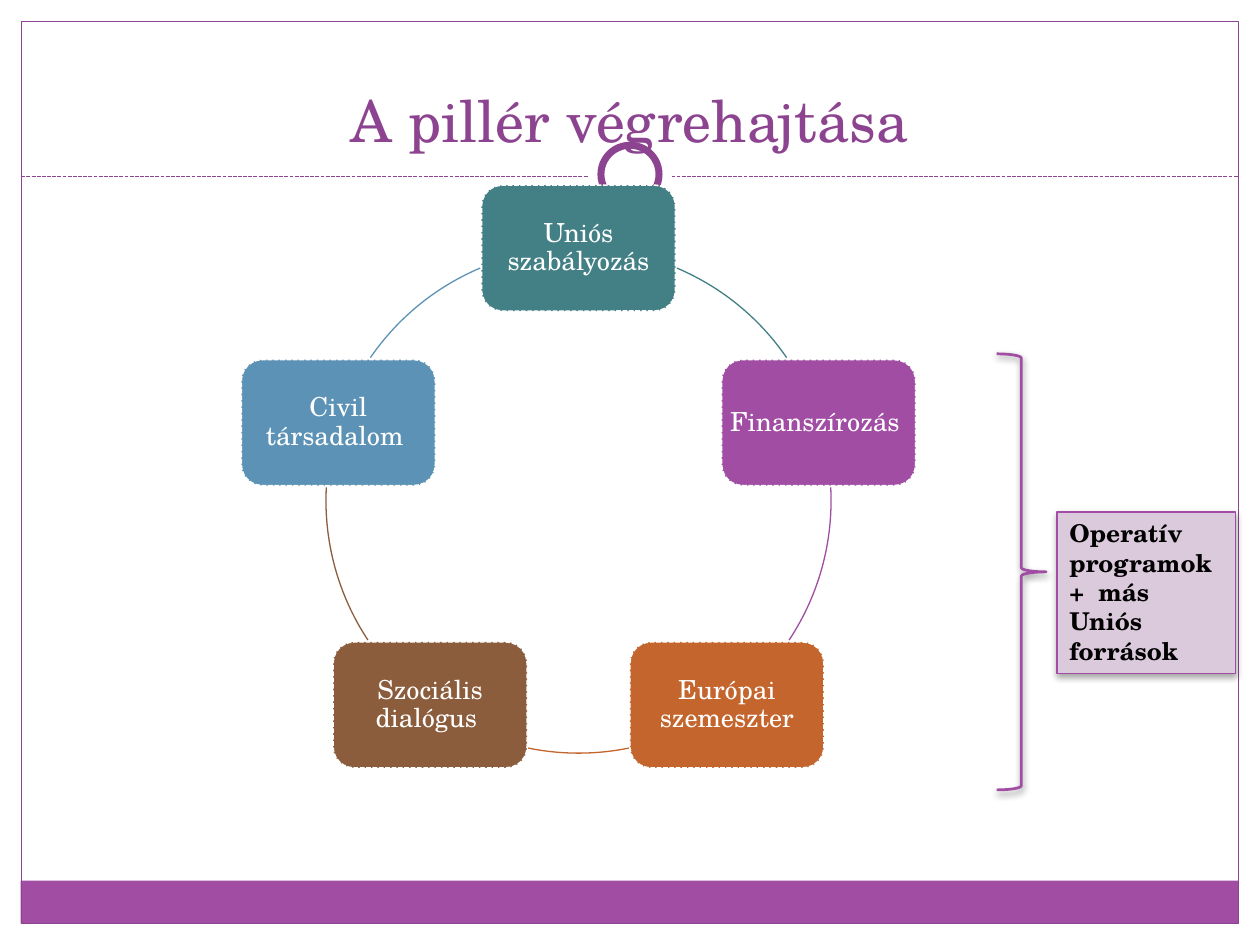
import math

import lxml.etree
import pptx
import pptx.dml.color
import pptx.enum.dml
import pptx.enum.shapes
import pptx.enum.text
import pptx.oxml.ns
import pptx.util

Pt = pptx.util.Pt
Shape = pptx.enum.shapes.MSO_SHAPE
Align = pptx.enum.text.PP_ALIGN
Anchor = pptx.enum.text.MSO_ANCHOR
qn = pptx.oxml.ns.qn

PURPLE = "A04DA3"
DARK_PURPLE = "8D4490"
WHITE = "FFFFFF"

CENTER_X, CENTER_Y, RADIUS = 330.6, 286.1, 144.3
NODE_WIDTH, NODE_HEIGHT = 110.9, 72
NODES = [
    ("Uniós szabályozás", "438086", 292.9, 325.5),
    ("Finanszírozás ", PURPLE, 357, 33.5),
    ("Európai szemeszter", "C4652D", 78.5, 101.5),
    ("Szociális dialógus ", "8B5D3D", 146.5, 183),
    ("Civil társadalom ", "5C92B5", 214.5, 247.1),
]


def color(value):
    return pptx.dml.color.RGBColor.from_string(value)


class SlideBuilder:
    font = "TeX Gyre Schola"

    def __init__(self, slide):
        self.slide = slide

    def outline(self, line, value, width, dashed=False):
        line.color.rgb = color(value)
        line.width = Pt(width)
        if dashed:
            line.dash_style = pptx.enum.dml.MSO_LINE.SQUARE_DOT

    def shape(self, kind, box, fill=None, line=None, width=0.75, dashed=False):
        shape = self.slide.shapes.add_shape(kind, *map(Pt, box))
        shape.shadow.inherit = False
        if fill:
            shape.fill.solid()
            shape.fill.fore_color.rgb = color(fill)
        else:
            shape.fill.background()
        if line:
            self.outline(shape.line, line, width, dashed)
        else:
            shape.line.fill.background()
        return shape

    def rule(self, left, right, y):
        connector = self.slide.shapes.add_connector(
            pptx.enum.shapes.MSO_CONNECTOR.STRAIGHT, Pt(left), Pt(y), Pt(right), Pt(y))
        self.outline(connector.line, DARK_PURPLE, 0.75, dashed=True)
        lxml.etree.SubElement(connector._element.spPr, qn("a:effectLst"))

    def arc(self, start, end, line):
        box = (CENTER_X - RADIUS, CENTER_Y - RADIUS, 2 * RADIUS, 2 * RADIUS)
        arc = self.shape(Shape.ARC, box, line=line)
        for index, angle in enumerate((start, end)):
            arc.adjustments[index] = angle * 0.6

    def drop_shadow(self, shape, opacity):
        effects = shape._element.spPr.find(qn("a:effectLst"))
        shadow = lxml.etree.SubElement(
            effects, qn("a:outerShdw"), blurRad=str(Pt(4)), dist=str(Pt(2)),
            dir="5400000", rotWithShape="0")
        black = lxml.etree.SubElement(shadow, qn("a:srgbClr"), val="000000")
        lxml.etree.SubElement(black, qn("a:alpha"), val=str(opacity * 1000))

    def label(self, shape, text, size, value, align, anchor, insets, bold=False, spacing=1.0):
        frame = shape.text_frame
        frame.word_wrap = True
        frame.vertical_anchor = anchor
        frame.margin_left, frame.margin_top, frame.margin_right, frame.margin_bottom = map(Pt, insets)
        frame.text = text
        paragraph = frame.paragraphs[0]
        paragraph.alignment = align
        paragraph.line_spacing = spacing
        paragraph.font.name = self.font
        paragraph.font.size = Pt(size)
        paragraph.font.bold = bold
        paragraph.font.color.rgb = color(value)

    def node(self, text, fill, position):
        angle = math.radians(72 * position - 90)
        left = CENTER_X + RADIUS * math.cos(angle) - NODE_WIDTH / 2
        top = CENTER_Y + RADIUS * math.sin(angle) - NODE_HEIGHT / 2
        node = self.shape(Shape.ROUNDED_RECTANGLE, (left, top, NODE_WIDTH, NODE_HEIGHT),
                          fill, WHITE, 0.9, dashed=True)
        self.label(node, text, 15, WHITE, Align.CENTER, Anchor.MIDDLE, (1, 1, 1, 1), spacing=0.9)

    def title(self, text, box):
        title = self.slide.shapes.add_textbox(*map(Pt, box))
        self.label(title, text, 33, DARK_PURPLE, Align.CENTER, Anchor.BOTTOM, (7.2, 3.6, 7.2, 0))

    def callout(self, text, box):
        callout = self.shape(Shape.RECTANGLE, box, "DBC9DC", PURPLE)
        self.label(callout, text, 14, "000000", Align.LEFT, Anchor.TOP,
                   (7.2, 3.6, 7.2, 3.6), bold=True)
        callout.text_frame.auto_size = pptx.enum.text.MSO_AUTO_SIZE.SHAPE_TO_FIT_TEXT
        self.drop_shadow(callout, 35)


def main():
    presentation = pptx.Presentation()
    presentation.slide_width = Pt(720)
    presentation.slide_height = Pt(540)
    builder = SlideBuilder(presentation.slides.add_slide(presentation.slide_layouts[6]))

    builder.shape(Shape.RECTANGLE, (11.8, 503.3, 695.8, 24.5), PURPLE)
    builder.shape(Shape.RECTANGLE, (12.2, 12.2, 695.5, 515.5), line=DARK_PURPLE)
    builder.rule(12.2, 707.7, 100.8)
    builder.shape(Shape.OVAL, (336, 75.6, 48, 48), WHITE)
    builder.shape(Shape.OVAL, (343.4, 83, 33.2, 33.2), WHITE, DARK_PURPLE, 4)

    for position, (text, fill, start, end) in enumerate(NODES):
        builder.node(text, fill, position)
        builder.arc(start, end, fill)

    builder.title("A pillér végrehajtása ", (54, 26, 620.6, 62))
    brace = builder.shape(Shape.RIGHT_BRACE, (569.5, 202.2, 28.3, 249.2), line=PURPLE, width=1.57)
    builder.drop_shadow(brace, 45)
    builder.callout("Operatív programok +  más Uniós források", (604, 292.6, 102.2, 92.2))

    presentation.save("out.pptx")


if __name__ == "__main__":
    main()
